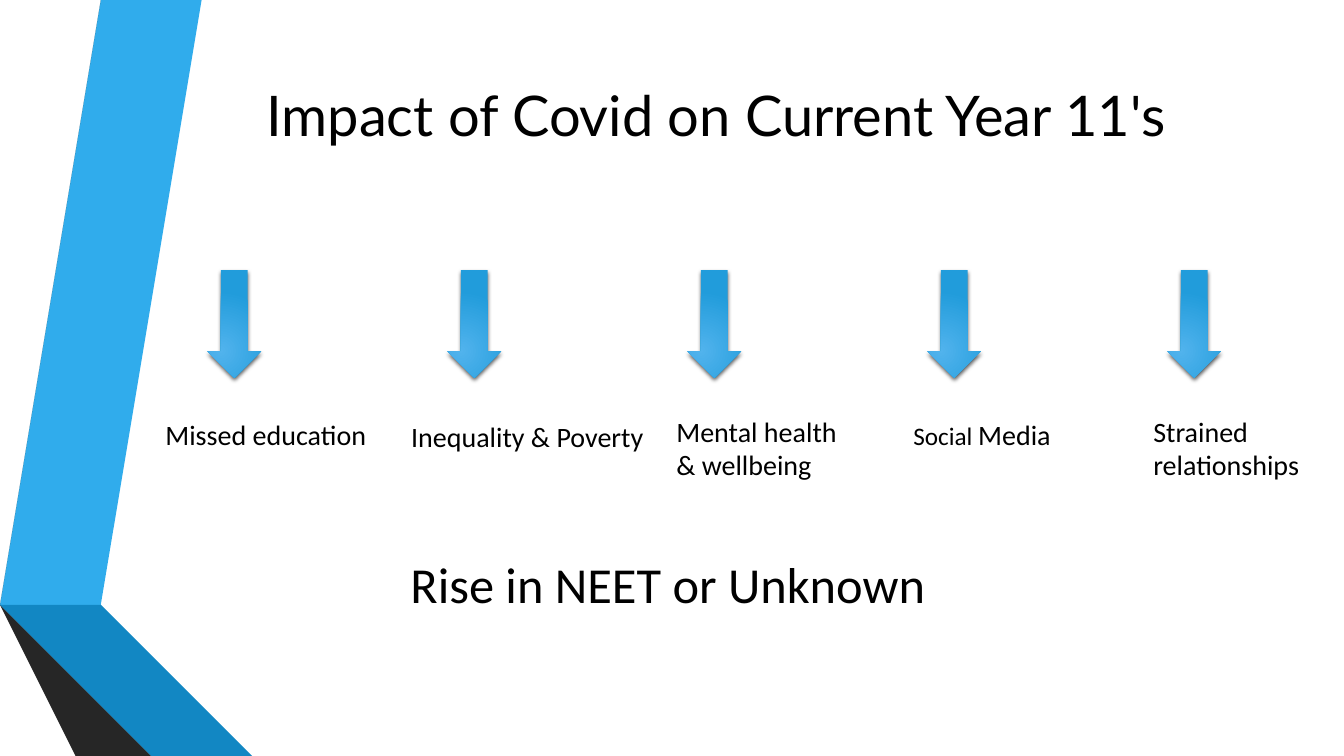
from lxml.etree import SubElement
from pptx import Presentation
from pptx.dml.color import RGBColor
from pptx.enum.shapes import MSO_SHAPE
from pptx.enum.text import MSO_ANCHOR, MSO_AUTO_SIZE, PP_ALIGN
from pptx.oxml import parse_xml
from pptx.oxml.ns import nsdecls, qn
from pptx.util import Inches, Pt

BLACK = RGBColor(0x00, 0x00, 0x00)
WHITE = RGBColor(0xFF, 0xFF, 0xFF)
ARROW_LIGHT = RGBColor(0x51, 0xB3, 0xED)
ARROW_DARK = RGBColor(0x21, 0x9C, 0xDB)
BLUE = RGBColor(0x30, 0xAC, 0xEC)
BLUE_FOLD = RGBColor(0x12, 0x87, 0xC3)
BLUE_EDGE = RGBColor(0x0C, 0x5A, 0x82)
GREY = RGBColor(0x59, 0x59, 0x59)
GREY_FOLD = RGBColor(0x40, 0x40, 0x40)
GREY_EDGE = RGBColor(0x26, 0x26, 0x26)

# Grid in inches: one column per impact, one row per kind of content
SLIDE_W, SLIDE_H = 13.33, 7.5
FIRST_COLUMN, COLUMN_PITCH = 2.06, 2.38
ARROW_ROW, ARROW_W, ARROW_H = 2.68, 0.53, 1.07
LABEL_ROW, LABEL_H = 4.09, 0.76

# Folded ribbons down the left edge
RIBBONS = [
    (BLUE, [(0.5, 5.78), (0.77, 5.83), (1.73, 0), (1.45, 0)]),
    (GREY, [(1.39, 0), (1.11, 0), (0.16, 5.73), (0.44, 5.77)]),
    (GREY_EDGE, [(0.16, 5.73), (1.45, SLIDE_H), (1.51, SLIDE_H)]),
    (BLUE_EDGE, [(0.5, 5.79), (2.08, SLIDE_H), (2.14, SLIDE_H)]),
    (BLUE_FOLD, [(0.5, 5.78), (2.14, SLIDE_H), (2.83, SLIDE_H), (0.77, 5.83)]),
    (GREY_FOLD, [(2.02, SLIDE_H), (0.48, 5.83), (0.43, 5.77), (0.16, 5.73),
                 (1.51, SLIDE_H)]),
]

# Label text, shift from its column's arrow, shift from the label row, width
IMPACTS = [
    ("Missed education", -0.52, 0, 2.64),
    ("Inequality & Poverty", -0.46, 0.02, 2.64),
    ("Mental health\v& wellbeing", -0.21, -0.03, 1.87),
    ("Social Media", -0.24, 0, 2.32),
    ("Strained\vrelationships", -0.24, -0.03, 1.77),
]


def place(shape, left, top, width, height):
    shape.left, shape.top = Inches(left), Inches(top)
    shape.width, shape.height = Inches(width), Inches(height)


def write(shape, text, size, font="Calibri", align=PP_ALIGN.LEFT,
          anchor=MSO_ANCHOR.TOP):
    frame = shape.text_frame
    frame.text = text
    frame.word_wrap = True
    frame.auto_size = MSO_AUTO_SIZE.NONE
    frame.vertical_anchor = anchor
    paragraph = frame.paragraphs[0]
    paragraph.alignment = align
    paragraph.space_before = Pt(0)
    for run in paragraph.runs:
        run.font.name, run.font.size = font, Pt(size)
        run.font.color.rgb = BLACK


def remove_bullet(paragraph):
    properties = paragraph._p.get_or_add_pPr()
    properties.set("marL", "0")
    properties.set("indent", "0")
    SubElement(properties, qn("a:buNone"))


def add_ribbon(slide, color, corners):
    builder = slide.shapes.build_freeform(*corners[0], scale=Inches(1))
    builder.add_line_segments(corners[1:], close=True)
    ribbon = builder.convert_to_shape()
    ribbon.shadow.inherit = False
    ribbon.fill.solid()
    ribbon.fill.fore_color.rgb = color
    ribbon.line.fill.background()


def add_arrow(slide, left):
    arrow = slide.shapes.add_shape(
        MSO_SHAPE.DOWN_ARROW, Inches(left), Inches(ARROW_ROW),
        Inches(ARROW_W), Inches(ARROW_H))
    arrow.line.fill.background()
    arrow.fill.gradient()
    for stop, color in zip(arrow.fill.gradient_stops, (ARROW_LIGHT, ARROW_DARK)):
        stop.color.rgb = color
    # Radial gradient and soft shadow below
    properties = arrow._element.spPr
    linear = properties.find(".//" + qn("a:lin"))
    linear.getparent().replace(linear, parse_xml(
        f'<a:path {nsdecls("a")} path="circle">'
        '<a:fillToRect l="50000" t="100000" r="100000" b="50000"/></a:path>'))
    properties.append(parse_xml(
        f'<a:effectLst {nsdecls("a")}><a:outerShdw blurRad="{Pt(3)}" '
        f'dist="{Pt(2)}" dir="5400000" rotWithShape="0"><a:srgbClr val="{BLACK}">'
        '<a:alpha val="64000"/></a:srgbClr></a:outerShdw></a:effectLst>'))


def add_text(slide, text, size, box, align=PP_ALIGN.LEFT):
    caption = slide.shapes.add_textbox(*map(Inches, box))
    write(caption, text, size, align=align)
    return caption


def main():
    prs = Presentation()
    prs.slide_width, prs.slide_height = Inches(SLIDE_W), Inches(SLIDE_H)
    slide = prs.slides.add_slide(prs.slide_layouts[1])
    slide.background.fill.solid()
    slide.background.fill.fore_color.rgb = WHITE

    for color, corners in RIBBONS:
        add_ribbon(slide, color, corners)

    # Title
    title, first_label = slide.placeholders
    place(title, 1.62, 0.75, 10.96, 0.77)
    write(title, "Impact of Covid on Current Year 11's", 40, "Lato",
          PP_ALIGN.CENTER, MSO_ANCHOR.MIDDLE)

    # Impacts: an arrow above each label, the first label in the body
    for column, (text, shift_x, shift_y, width) in enumerate(IMPACTS):
        left = FIRST_COLUMN + column * COLUMN_PITCH
        add_arrow(slide, left)
        box = (left + shift_x, LABEL_ROW + shift_y, width, LABEL_H)
        if column == 0:
            place(first_label, *box)
            write(first_label, text, 20)
            remove_bullet(first_label.text_frame.paragraphs[0])
        else:
            label = add_text(slide, text, 20, box)
            if text == "Social Media":
                paragraph = label.text_frame.paragraphs[0]
                paragraph.text = "Social "
                paragraph.add_run().text = "Media"
                for run, size in zip(paragraph.runs, (18, 20)):
                    run.font.name, run.font.size = "Calibri", Pt(size)
                    run.font.color.rgb = BLACK

    # Outcome
    add_text(slide, "Rise in NEET or Unknown", 36, (3.88, 5.44, 5.49, 0.71),
             PP_ALIGN.CENTER)
    prs.save("out.pptx")


if __name__ == "__main__":
    main()
